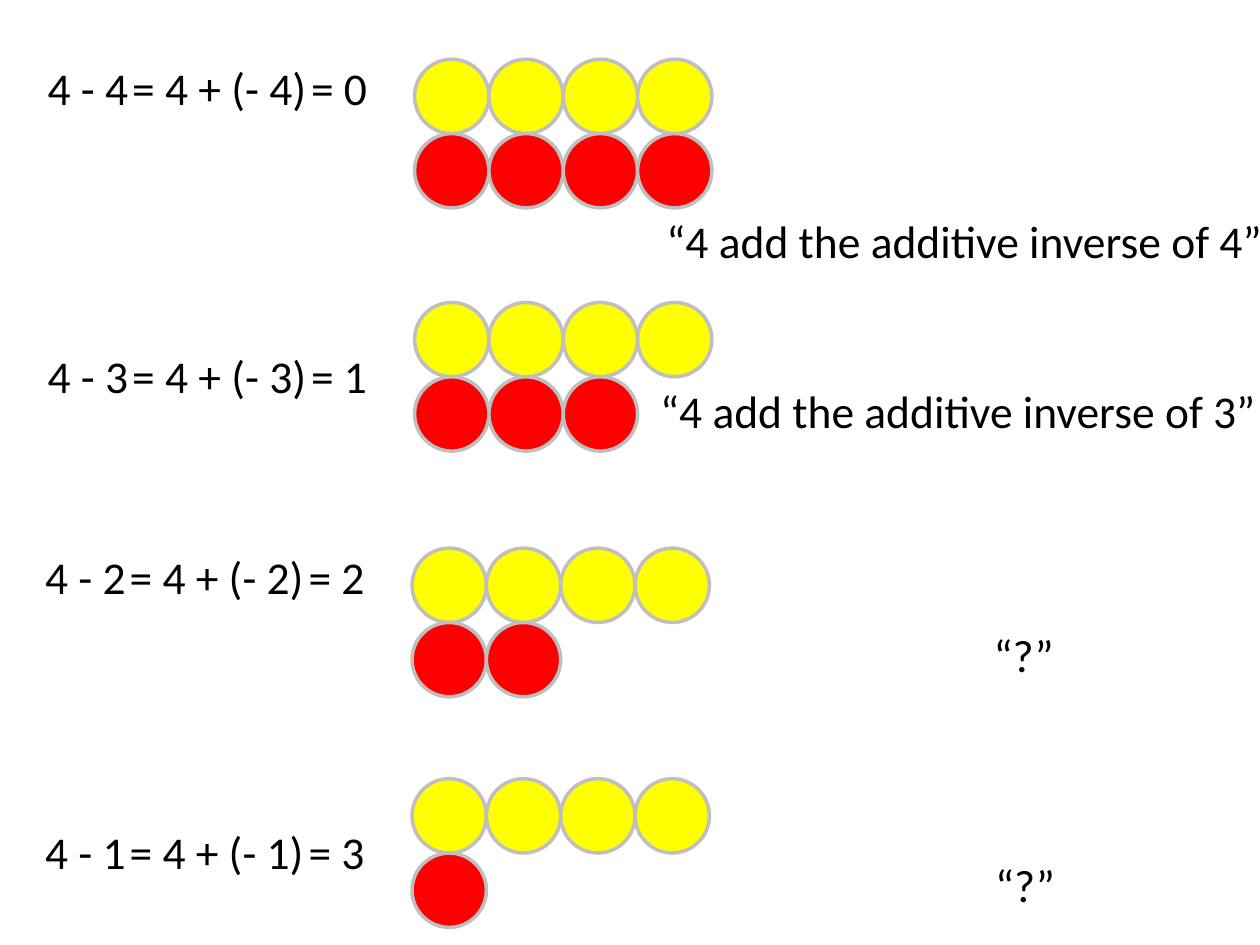
from pptx import Presentation
from pptx.dml.color import RGBColor
from pptx.enum.shapes import MSO_SHAPE
from pptx.enum.text import MSO_AUTO_SIZE, PP_ALIGN
from pptx.util import Inches, Pt

COLORS = {"positive": "FFFF00", "negative": "FF0000", "outline": "BFBFBF", "text": "000000"}
FONT = "Calibri"
TEXT_SIZE = 26
TEXT_HEIGHT = 0.54
TERM_WIDTH = 1.65
COUNTER = 0.59
MINUEND = 4

EXAMPLES = [
    {"subtrahend": 4, "equation": (0.28, 0.43), "counters": (3.29, 0.47),
     "caption": ("“4 add the additive inverse of 4”", 5, 1.64, 5.31)},
    {"subtrahend": 3, "equation": (0.28, 2.71), "counters": (3.29, 2.4),
     "caption": ("“4 add the additive inverse of 3”", 4.95, 2.99, 5.31)},
    {"subtrahend": 2, "equation": (0.26, 4.31), "counters": (3.27, 4.35),
     "caption": ("“?”", 5.11, 4.93, 6.03)},
    {"subtrahend": 1, "equation": (0.26, 6.49), "counters": (3.27, 6.18),
     "caption": ("“?”", 5.48, 6.75, 5.31)},
]


def color(name):
    return RGBColor.from_string(COLORS[name])


def add_text(slide, text, left, top, width, alignment=PP_ALIGN.LEFT):
    box = slide.shapes.add_textbox(Inches(left), Inches(top), Inches(width), Inches(TEXT_HEIGHT))
    frame = box.text_frame
    frame.word_wrap = True
    frame.auto_size = MSO_AUTO_SIZE.SHAPE_TO_FIT_TEXT
    paragraph = frame.paragraphs[0]
    paragraph.alignment = alignment
    run = paragraph.add_run()
    run.text = text
    run.font.name = FONT
    run.font.size = Pt(TEXT_SIZE)
    run.font.color.rgb = color("text")


def add_equation(slide, subtrahend, left, top):
    terms = [
        (f"{MINUEND} - {subtrahend}", 0),
        (f"= {MINUEND} + (- {subtrahend})", 0.67),
        (f"= {MINUEND - subtrahend}", 2.09),
    ]
    for text, offset in terms:
        add_text(slide, text, left + offset, top, TERM_WIDTH)


def add_counter(group, fill, left, top):
    shape = group.shapes.add_shape(
        MSO_SHAPE.OVAL, Inches(left), Inches(top), Inches(COUNTER), Inches(COUNTER))
    shape.shadow.inherit = False
    shape.fill.solid()
    shape.fill.fore_color.rgb = color(fill)
    shape.line.color.rgb = color("outline")
    shape.line.width = Pt(2)


def add_counters(slide, subtrahend, left, top):
    group = slide.shapes.add_group_shape()
    for row, (fill, count) in enumerate([("positive", MINUEND), ("negative", subtrahend)]):
        for column in range(count):
            add_counter(group, fill, left + column * COUNTER, top + row * COUNTER)


def main():
    """Build the slide on subtracting by adding the additive inverse."""
    presentation = Presentation()
    presentation.slide_width = Inches(10)
    presentation.slide_height = Inches(7.5)
    slide = presentation.slides.add_slide(presentation.slide_layouts[6])
    for example in EXAMPLES:
        add_equation(slide, example["subtrahend"], *example["equation"])
        add_counters(slide, example["subtrahend"], *example["counters"])
        add_text(slide, *example["caption"], alignment=PP_ALIGN.CENTER)
    presentation.save("out.pptx")


if __name__ == "__main__":
    main()
